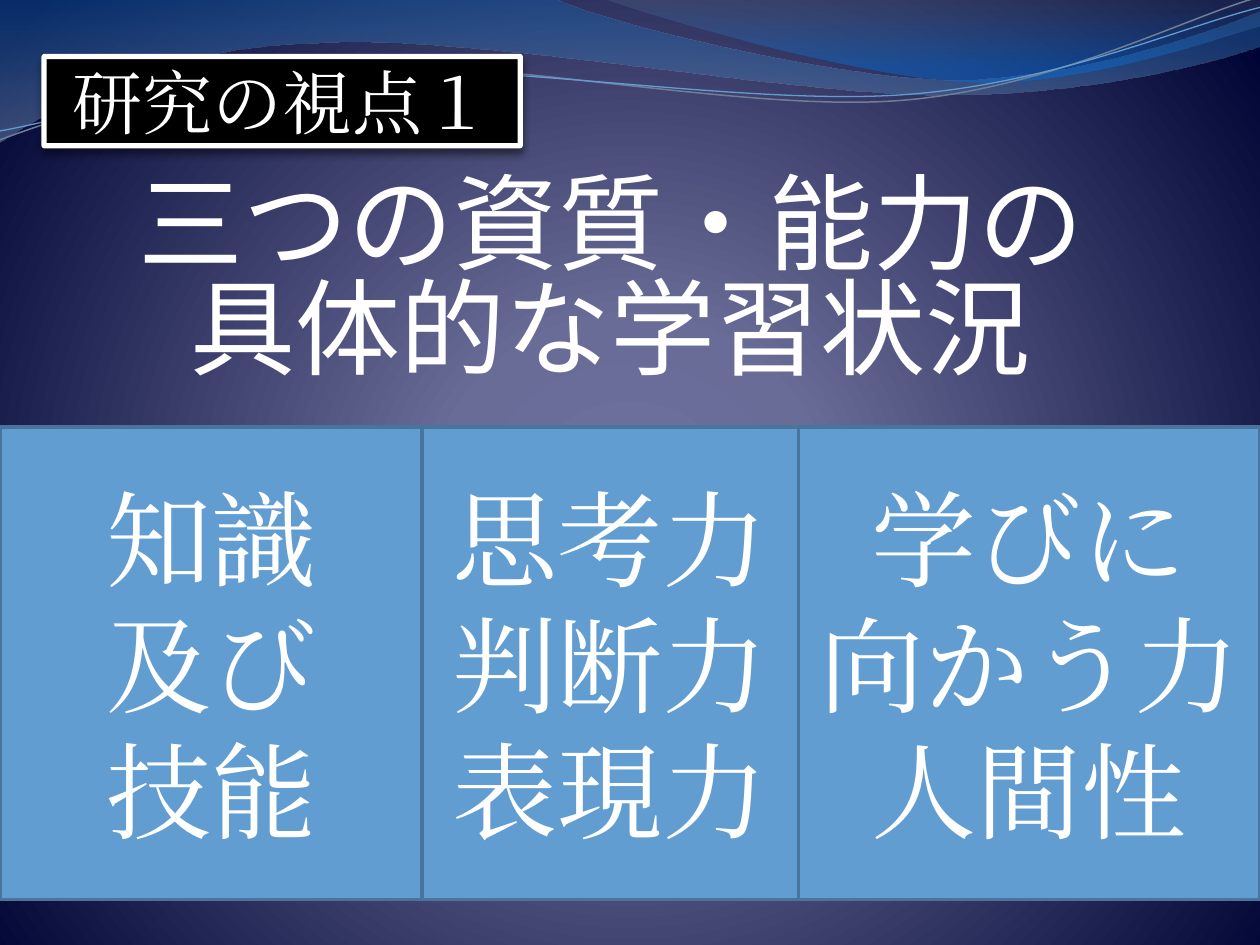
from dataclasses import dataclass
from itertools import pairwise

from lxml.etree import SubElement
from pptx import Presentation
from pptx.dml.color import RGBColor
from pptx.enum.shapes import MSO_SHAPE
from pptx.enum.text import MSO_ANCHOR, PP_ALIGN
from pptx.oxml.ns import qn
from pptx.util import Cm, Pt


@dataclass(frozen=True)
class Theme:
    white: str = "FFFFFF"
    black: str = "000000"
    panel: str = "629DD1"
    panel_edge: str = "49749B"
    grey_line: str = "707E95"
    background: tuple = ((0, "6E71A1", 100), (25, "696C96", 100), (100, "000434", 100))
    wide_wave: tuple = ((0, "125EAA", 45), (100, "697FA4", 55))
    right_wave: tuple = ((0, "596982", 30), (80, "0670DA", 45))
    body_font: str = "Cambria"
    title_font: str = "Noto Sans CJK JP"
    label_size: int = 40
    large_size: int = 60


THEME = Theme()

# Each outline is a start point followed by steps: a line (2 numbers) or a Bézier curve (6 numbers), in cm.
WIDE_WAVE = [
    (0, 0), (11.18, -0.03),
    (12.09, 0.43, 16.87, 1.6, 19.25, 1.6), (21.67, 1.6, 24.33, 0.66, 25.4, 0.23),
    (25.43, 0.91),
    (24.97, 1.12, 22.1, 1.93, 18.95, 1.91), (15.8, 1.91, 9.7, 0.71, 6.53, 0.86),
    (3.28, 0.91, 1.17, 2.11, -0.03, 2.87), (0, 0),
]
RIGHT_WAVE = [
    (12.17, -0.03),
    (12.93, 0.28, 17.32, 1.57, 19.53, 1.65), (21.74, 1.75, 24.41, 0.81, 25.4, 0.53),
    (25.4, 0), (12.17, -0.03),
]
GREY_STRAND = [
    (0, 2.82), (1.22, 2.36, 4.01, 1.45, 7.04, 1.32),
    (10.03, 1.19, 15.06, 2.26, 18.11, 2.03), (21.16, 1.8, 23.83, 0.38, 25.35, -0.05),
]
BLUE_STRAND = [
    (0, 2.64), (1.19, 2.44, 4.17, 1.55, 7.19, 1.42),
    (10.24, 1.3, 15.16, 2.13, 18.21, 1.91), (21.23, 1.7, 23.85, 0.53, 25.4, 0.15),
]


def add_element(parent, tag, **attributes):
    return SubElement(parent, qn(tag), {key: str(value) for key, value in attributes.items()})


def add_color(parent, color, opacity):
    value = add_element(parent, "a:srgbClr", val=color)
    if opacity < 100:
        add_element(value, "a:alpha", val=opacity * 1000)


def set_gradient(fill, element, stops, circle=None):
    """Fill with (position, colour, opacity) stops, downwards or towards a circle's focus."""
    fill.gradient()
    gradient = element.find(".//" + qn("a:gradFill"))
    for child in list(gradient):
        gradient.remove(child)
    stop_list = add_element(gradient, "a:gsLst")
    for position, color, opacity in stops:
        add_color(add_element(stop_list, "a:gs", pos=position * 1000), color, opacity)
    if circle:
        path = add_element(gradient, "a:path", path="circle")
        add_element(path, "a:fillToRect", **circle)
    else:
        add_element(gradient, "a:lin", ang=5400000, scaled=1)


def set_line(shape, color, width):
    shape.line.color.rgb = RGBColor.from_string(color)
    shape.line.width = Pt(width)


def add_outline(page, left, top, outline, closed):
    """Build a freeform through the end points, then bend its curved steps."""
    ends = [(Cm(left + step[-2]), Cm(top + step[-1])) for step in outline]
    builder = page.shapes.build_freeform(*ends[0])
    builder.add_line_segments(ends[1:], close=closed)
    shape = builder.convert_to_shape()
    shape.shadow.inherit = False
    segments = shape._element.findall(".//" + qn("a:lnTo"))
    for segment, step in zip(segments, outline[1:]):
        if len(step) == 2:
            continue
        curve = add_element(segment.getparent(), "a:cubicBezTo")
        for x, y in zip(step[::2], step[1::2]):
            add_element(curve, "a:pt", x=Cm(left + x) - shape.left, y=Cm(top + y) - shape.top)
        segment.getparent().replace(segment, curve)
    return shape


def add_waves(page, left, top):
    for outline, stops in ((WIDE_WAVE, THEME.wide_wave), (RIGHT_WAVE, THEME.right_wave)):
        wave = add_outline(page, left, top, outline, closed=True)
        set_gradient(wave.fill, wave._element, stops)
        wave.line.fill.background()
    for outline, color, width in ((GREY_STRAND, THEME.grey_line, 0.85), (BLUE_STRAND, THEME.panel, 0.75)):
        strand = add_outline(page, left, top, outline, closed=False)
        strand.fill.background()
        set_line(strand, color, width)


def add_box(page, kind, box, fill=None, line=None):
    shape = page.shapes.add_shape(kind, *(Cm(length) for length in box))
    shape.shadow.inherit = False
    if kind == MSO_SHAPE.ROUNDED_RECTANGLE:
        shape.adjustments[0] = 0.006
    if fill:
        shape.fill.solid()
        shape.fill.fore_color.rgb = RGBColor.from_string(fill)
    else:
        shape.fill.background()
    if line:
        set_line(shape, *line)
    else:
        shape.line.fill.background()
    return shape


def write(shape, lines, size, font, wrap, **spacing):
    frame = shape.text_frame
    frame.word_wrap = wrap
    frame.vertical_anchor = MSO_ANCHOR.MIDDLE
    for index, line in enumerate(lines):
        para = frame.add_paragraph() if index else frame.paragraphs[0]
        for name, value in {"alignment": PP_ALIGN.CENTER, **spacing}.items():
            setattr(para, name, value)
        span = para.add_run()
        span.text = line
        span.font.color.rgb = RGBColor.from_string(THEME.white)
        for name, value in {"size": Pt(size), "name": font}.items():
            setattr(span.font, name, value)
        add_element(span.font._element, "a:ea", typeface=font)


def add_label(page, box):
    label = add_box(page, MSO_SHAPE.ROUNDED_RECTANGLE, box, THEME.black, (THEME.white, 3))
    effects = label._element.spPr.find(qn("a:effectLst"))
    shadow = add_element(effects, "a:outerShdw", blurRad=Pt(4.5), dist=Pt(3), dir=5400000, rotWithShape=0)
    add_color(shadow, THEME.black, 48)
    write(label, ["研究の視点１"], THEME.label_size, THEME.body_font, wrap=False)


def add_title(page, box):
    title = add_box(page, MSO_SHAPE.ROUNDED_RECTANGLE, box)
    write(title, ["三つの資質・能力の", "具体的な学習状況"], THEME.large_size, THEME.title_font,
          wrap=False, line_spacing=Pt(30), space_before=Pt(30))


def add_panels(page, left, top, height):
    edges = [0, 8.51, 16.1, 25.4]
    texts = [["知識", "及び", "技能"], ["思考力判断力表現力"], ["学びに", "向かう力人間性"]]
    for (start, end), lines in zip(pairwise(edges), texts):
        panel = add_box(page, MSO_SHAPE.RECTANGLE, (left + start, top, end - start, height),
                        THEME.panel, (THEME.panel_edge, 2))
        write(panel, lines, THEME.large_size, THEME.body_font, wrap=True)


def main():
    deck = Presentation()
    deck.slide_width, deck.slide_height = Cm(25.4), Cm(19.05)
    page = deck.slides.add_slide(deck.slide_layouts[6])
    set_gradient(page.background.fill, page._element, THEME.background,
                 circle={"l": 10000, "t": 110000, "r": 10000, "b": 100000})
    add_waves(page, 0, 0)
    add_label(page, (0.89, 1.14, 9.6, 1.8))
    add_title(page, (4.83, 4.04, 14.96, 4.42))
    add_panels(page, 0, 8.61, 9.52)
    deck.save("out.pptx")


if __name__ == "__main__":
    main()
